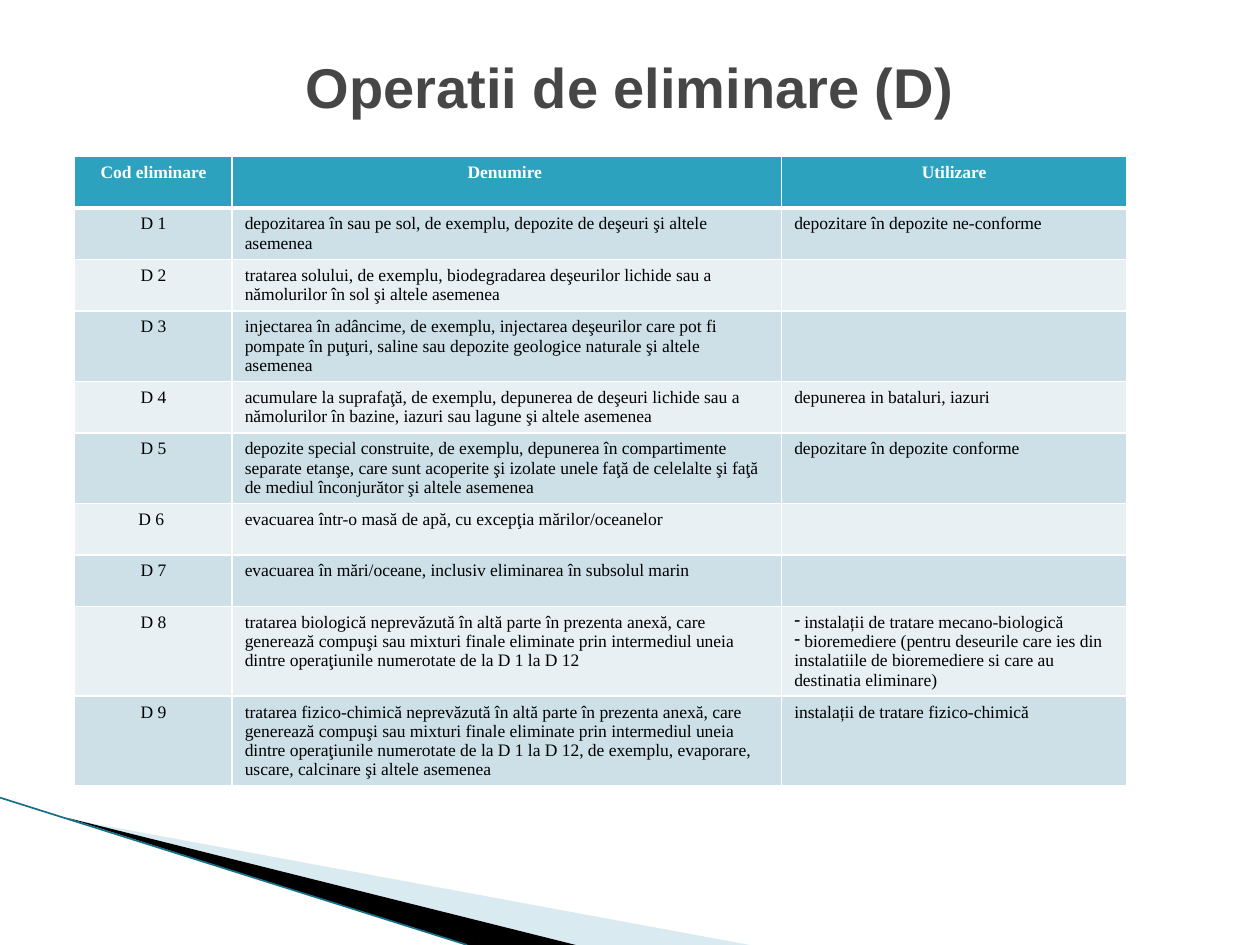
from lxml import etree
from pptx import Presentation
from pptx.dml import color
from pptx.enum import text
from pptx.oxml import ns
from pptx.util import Pt

HEAD = ["Cod eliminare", "Denumire ", "Utilizare"]
ROWS = [
    ["D 1", "depozitarea în sau pe sol, de exemplu, depozite de deşeuri şi altele asemenea",
     "depozitare în depozite ne-conforme"],
    ["D 2", "tratarea solului, de exemplu, biodegradarea deşeurilor lichide sau a nămolurilor "
     "în sol şi altele asemenea", ""],
    ["D 3", "injectarea în adâncime, de exemplu, injectarea deşeurilor care pot fi pompate în "
     "puţuri, saline sau depozite geologice naturale şi altele asemenea", ""],
    ["D 4", "acumulare la suprafaţă, de exemplu, depunerea de deşeuri lichide sau a nămolurilor "
     "în bazine, iazuri sau lagune şi altele asemenea", "depunerea in bataluri, iazuri"],
    ["D 5", "depozite special construite, de exemplu, depunerea în compartimente separate etanşe, "
     "care sunt acoperite şi izolate unele faţă de celelalte şi faţă de mediul înconjurător "
     "şi altele asemenea", "depozitare în depozite conforme"],
    ["D 6 ", "evacuarea într-o masă de apă, cu excepţia mărilor/oceanelor", ""],
    ["D 7", "evacuarea în mări/oceane, inclusiv eliminarea în subsolul marin", ""],
    ["D 8", "tratarea biologică neprevăzută în altă parte în prezenta anexă, care generează "
     "compuşi sau mixturi finale eliminate prin intermediul uneia dintre operaţiunile "
     "numerotate de la D 1 la D 12",
     [" instalații de tratare mecano-biologică",
      " bioremediere (pentru deseurile care ies din instalatiile de bioremediere si care au "
      "destinatia eliminare)"]],
    ["D 9", "tratarea fizico-chimică neprevăzută în altă parte în prezenta anexă, care generează "
     "compuşi sau mixturi finale eliminate prin intermediul uneia dintre operaţiunile "
     "numerotate de la D 1 la D 12, de exemplu, evaporare, uscare, calcinare şi altele asemenea",
     "instalații de tratare fizico-chimică"],
]
WIDTHS = [90, 314, 197]
BANDS = ["CDE0E8", "E8F0F4"]
MID = text.PP_ALIGN.CENTER
LEFT = text.PP_ALIGN.LEFT


def ink(code):
    return color.RGBColor.from_string(code)


def paint(fill, code):
    fill.solid()
    fill.fore_color.rgb = ink(code)


def sub(node, tag, **attrs):
    return etree.SubElement(node, ns.qn(tag), attrs)


def write(para, words, align, code, form):
    para.alignment = align
    run = para.add_run()
    run.text = words
    for key, val in form.items():
        setattr(run.font, key, val)
    run.font.color.rgb = ink(code)


def add_title(slide, left, top, width, height):
    title = slide.shapes.title
    spot = dict(left=Pt(left), top=Pt(top), width=Pt(width), height=Pt(height))
    for key, val in spot.items():
        setattr(title, key, val)
    title.text_frame.vertical_anchor = text.MSO_ANCHOR.MIDDLE
    write(title.text_frame.paragraphs[0], "Operatii de eliminare (D)", MID, "464646",
          dict(name="Arial", size=Pt(32), bold=True))


def edge(cell, row):
    props = cell._tc.get_or_add_tcPr()
    thick = {0: "a:lnB", 1: "a:lnT"}.get(row)
    for tag in ("a:lnL", "a:lnR", "a:lnT", "a:lnB"):
        line = sub(props, tag, w=str(Pt(3 if tag == thick else 1)))
        sub(sub(line, "a:solidFill"), "a:srgbClr", val="FFFFFF")


def fill_cell(cell, words, row, col):
    edge(cell, row)
    paint(cell.fill, BANDS[(row - 1) % 2] if row else "2DA2BF")
    dashed = isinstance(words, list)
    frame = cell.text_frame
    for num, part in enumerate(words if dashed else [words]):
        para = frame.add_paragraph() if num else frame.paragraphs[0]
        if dashed:
            props = para._p.get_or_add_pPr()
            props.set("marL", "0")
            props.set("indent", "0")
            sub(props, "a:buChar", char="-")
        if part:
            write(para, part, LEFT if row and col else MID, "000000" if row else "FFFFFF",
                  dict(name="Times New Roman", size=Pt(10), bold=not row))


def add_grid(slide, left, top, width, height):
    data = [HEAD] + ROWS
    grid = slide.shapes.add_table(len(data), len(HEAD), Pt(left), Pt(top),
                                  Pt(width), Pt(height)).table
    for col, wide in zip(grid.columns, WIDTHS):
        col.width = Pt(wide)
    for row, line in enumerate(data):
        for col, words in enumerate(line):
            fill_cell(grid.cell(row, col), words, row, col)


def add_wedge(slide, left, top, dots, code, alpha=100):
    dots = [(Pt(left + x), Pt(top + y)) for x, y in dots]
    pen = slide.shapes.build_freeform(*dots[0])
    pen.add_line_segments(dots[1:], close=True)
    wedge = pen.convert_to_shape()
    wedge.shadow.inherit = False
    paint(wedge.fill, code)
    wedge.line.fill.background()
    if alpha < 100:
        tint = wedge._element.spPr.find(".//" + ns.qn("a:srgbClr"))
        sub(tint, "a:alpha", val=str(alpha * 1000))


def add_sweep(slide, left, top, width, height):
    add_wedge(slide, left, top, [(39.6, 12.3), (428.4, height), (328.3, height)], "A0CBDC", 40)
    add_wedge(slide, left, top, [(38.2, 11.5), (329, height), (width, height)], "000000")
    line = slide.shapes.add_connector(1, Pt(left), Pt(top), Pt(left + width), Pt(top + height))
    line.line.color.rgb = ink("15708A")
    line.line.width = Pt(0.95)
    sub(line._element.spPr, "a:effectLst")


def main():
    deck = Presentation()
    deck.slide_width, deck.slide_height = Pt(720), Pt(540)
    slide = deck.slides.add_slide(deck.slide_layouts[5])
    add_sweep(slide, 0, 455.8, 267, 84.2)
    add_grid(slide, 42.7, 89.5, sum(WIDTHS), 294)
    add_title(slide, 36, 21.6, 648, 55.4)
    deck.save("out.pptx")


if __name__ == "__main__":
    main()
